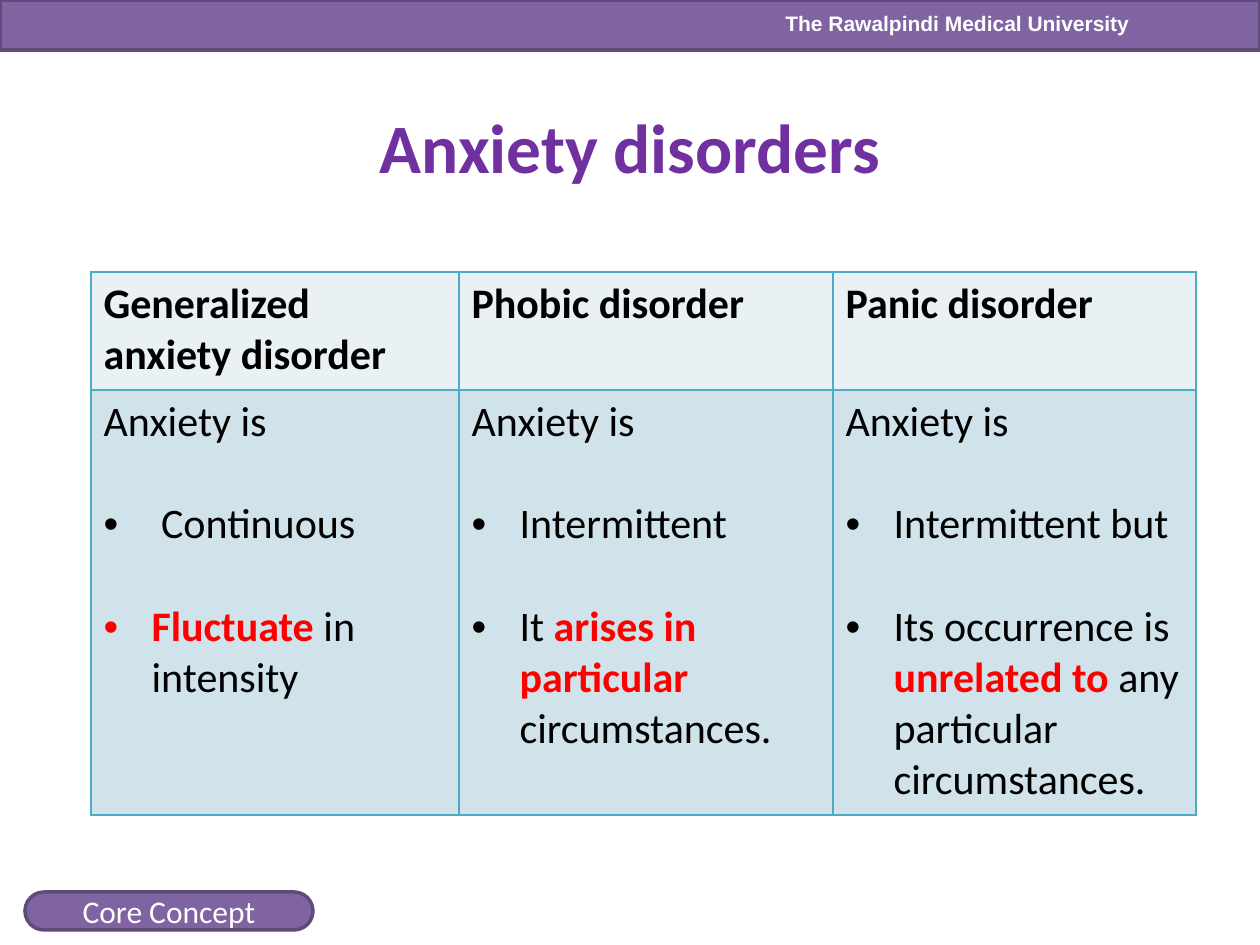
"""Build the anxiety disorders comparison slide."""
from lxml.etree import SubElement
from pptx import Presentation
from pptx.dml.color import RGBColor
from pptx.enum.shapes import MSO_SHAPE
from pptx.enum.text import MSO_ANCHOR, MSO_AUTO_SIZE, PP_ALIGN
from pptx.oxml import parse_xml
from pptx.oxml.ns import nsdecls, qn
from pptx.util import Pt

SCALE = 914400 / 126
PURPLE, EDGE, RED, BLACK, WHITE = "8064A2", "5F4A78", "FF0000", "000000", "FFFFFF"
GRID, HEAD, BODY = "4BACC6", "E9F1F5", "D0E3EA"
PLAIN = {"size": Pt(24), "name": "Calibri", "bold": False}
BOLD = {**PLAIN, "bold": True}
KINDS = {"n": (PLAIN, BLACK), "b": (BOLD, BLACK), "r": (BOLD, RED)}

BAND = (0, 0, 1260, 50)
SCHOOL = ("The Rawalpindi Medical University", (771, 4, 373, 38))
TITLE = ("Anxiety disorders", (63, 97, 1134, 98))
BADGE = ("Core Concept", (25, 892, 288, 38))
ORIGIN, COLS, ROWS = (91, 272), (368, 374, 363), (118, 425)
LEAD = "Anxiety is"
TYPES = [
    ("Generalized anxiety disorder",
     [[("n", " Continuous")], [("r", "Fluctuate"), ("n", " in intensity")]]),
    ("Phobic disorder",
     [[("n", "Intermittent")],
      [("n", "It "), ("r", "arises in particular "), ("n", "circumstances.")]]),
    ("Panic disorder",
     [[("n", "Intermittent but")],
      [("n", "Its occurrence is "), ("r", "unrelated to"),
       ("n", " any particular circumstances.")]]),
]


def px(n):
    return round(n * SCALE)


def rgb(code):
    return RGBColor.from_string(code)


def paint(cell, code):
    cell.fill.solid()
    cell.fill.fore_color.rgb = rgb(code)


def write(para, text, style, code):
    run = para.add_run()
    run.text = text
    for key, val in style.items():
        setattr(run.font, key, val)
    run.font.color.rgb = rgb(code)


def label(shape, text, style, code):
    frame = shape.text_frame
    frame.vertical_anchor = MSO_ANCHOR.MIDDLE
    frame.paragraphs[0].alignment = PP_ALIGN.CENTER
    write(frame.paragraphs[0], text, style, code)
    return frame


def block(slide, kind, box):
    shape = slide.shapes.add_shape(kind, *map(px, box))
    shape.shadow.inherit = False
    paint(shape, PURPLE)
    shape.line.color.rgb = rgb(EDGE)
    shape.line.width = Pt(2)
    return shape


def border(cell):
    props = cell._tc.get_or_add_tcPr()
    for i, side in enumerate("LRTB"):
        props.insert(i, parse_xml(
            f'<a:ln{side} {nsdecls("a")} w="12700"><a:solidFill>'
            f'<a:srgbClr val="{GRID}"/></a:solidFill></a:ln{side}>'))


def bullet(para):
    props = para._p.get_or_add_pPr()
    props.set("marL", str(px(48)))
    props.set("indent", str(px(-48)))
    SubElement(props, qn("a:buFont"), typeface="Arial")
    SubElement(props, qn("a:buChar"), char="•")
    para.space_before = Pt(29.3)


def grid(slide):
    size = (sum(COLS), sum(ROWS))
    table = slide.shapes.add_table(2, 3, *map(px, ORIGIN + size)).table
    for line, width in zip(table.columns, COLS):
        line.width = px(width)
    for line, height in zip(table.rows, ROWS):
        line.height = px(height)
    for col, (name, points) in enumerate(TYPES):
        head, body = table.cell(0, col), table.cell(1, col)
        for cell, code in ((head, HEAD), (body, BODY)):
            paint(cell, code)
            border(cell)
        write(head.text_frame.paragraphs[0], name, *KINDS["b"])
        write(body.text_frame.paragraphs[0], LEAD, *KINDS["n"])
        for runs in points:
            para = body.text_frame.add_paragraph()
            bullet(para)
            for kind, text in runs:
                write(para, text, *KINDS[kind])


def main():
    deck = Presentation()
    deck.slide_width, deck.slide_height = px(1260), px(945)
    slide = deck.slides.add_slide(deck.slide_layouts[5])
    block(slide, MSO_SHAPE.RECTANGLE, BAND)

    text, box = SCHOOL
    frame = label(slide.shapes.add_textbox(*map(px, box)), text,
                  {"size": Pt(12), "name": "Arial", "bold": True}, WHITE)
    frame.word_wrap = False

    text, box = TITLE
    title = slide.shapes.title
    for key, val in zip(("left", "top", "width", "height"), box):
        setattr(title, key, px(val))
    frame = label(title, text, {**BOLD, "size": Pt(39.6)}, "7030A0")
    frame.auto_size = MSO_AUTO_SIZE.NONE

    grid(slide)
    text, box = BADGE
    badge = block(slide, MSO_SHAPE.ROUNDED_RECTANGLE, box)
    badge.adjustments[0] = 0.5
    label(badge, text, {**PLAIN, "size": Pt(18)}, WHITE)
    deck.save("out.pptx")


if __name__ == "__main__":
    main()
